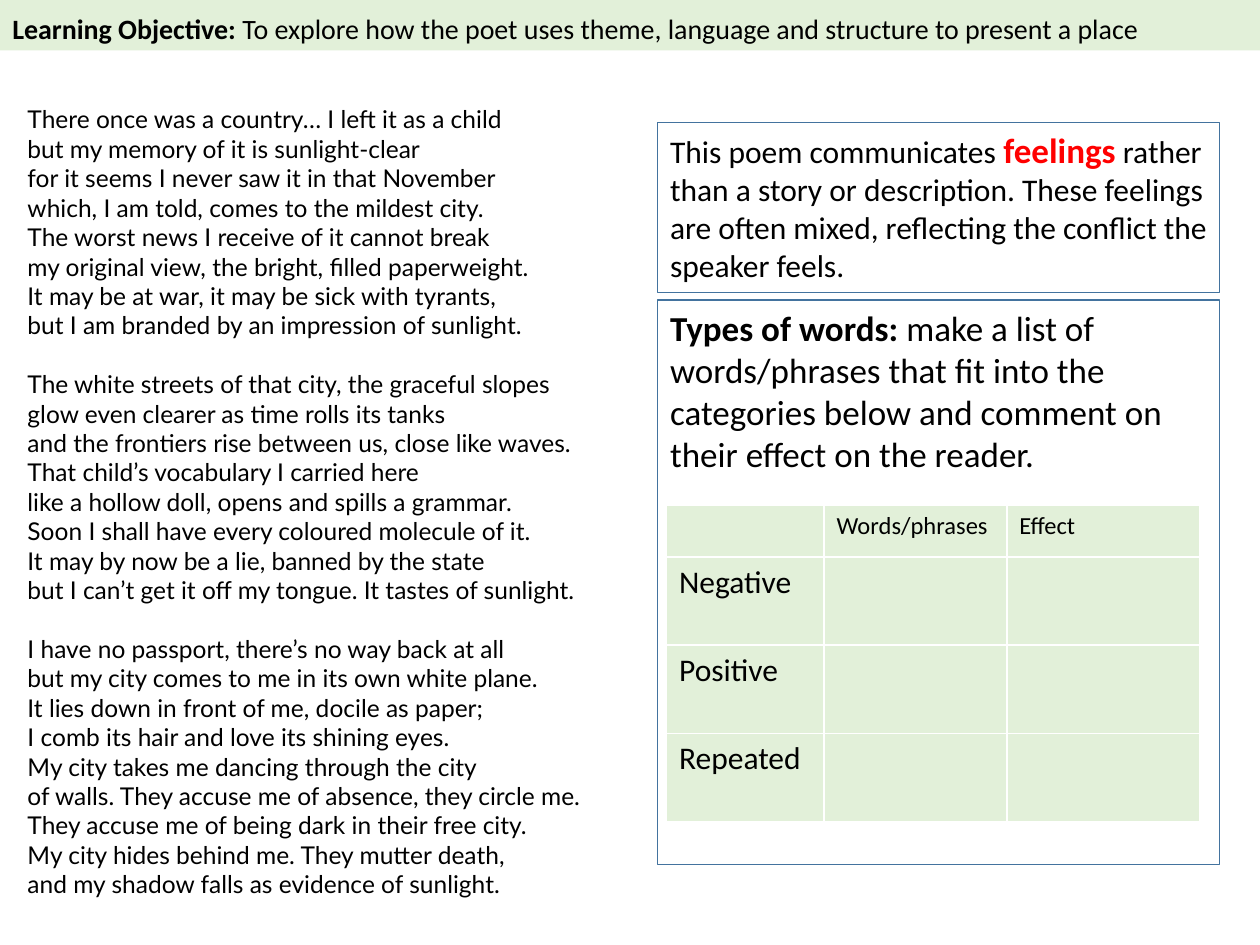
from pptx import Presentation
from pptx.dml.color import RGBColor
from pptx.enum.shapes import MSO_SHAPE
from pptx.enum.text import MSO_ANCHOR, PP_ALIGN
from pptx.util import Inches, Pt

BLACK = RGBColor(0x00, 0x00, 0x00)
RED = RGBColor(0xFF, 0x00, 0x00)
PALE_GREEN = RGBColor(0xE2, 0xF0, 0xD9)
BLUE = RGBColor(0x43, 0x73, 0x9E)

STANZAS = [
    """There once was a country… I left it as a child
but my memory of it is sunlight-clear
for it seems I never saw it in that November
which, I am told, comes to the mildest city.
The worst news I receive of it cannot break
my original view, the bright, filled paperweight.
It may be at war, it may be sick with tyrants,
but I am branded by an impression of sunlight.""",
    """The white streets of that city, the graceful slopes
glow even clearer as time rolls its tanks
and the frontiers rise between us, close like waves.
That child’s vocabulary I carried here
like a hollow doll, opens and spills a grammar.
Soon I shall have every coloured molecule of it.
It may by now be a lie, banned by the state
but I can’t get it off my tongue. It tastes of sunlight.""",
    """I have no passport, there’s no way back at all
but my city comes to me in its own white plane.
It lies down in front of me, docile as paper;
I comb its hair and love its shining eyes.
My city takes me dancing through the city
of walls. They accuse me of absence, they circle me.
They accuse me of being dark in their free city.
My city hides behind me. They mutter death,
and my shadow falls as evidence of sunlight.""",
]


def add_box(left, top, width, height, runs, fill=None, line=None):
    """Add a rectangle whose runs are (text, size, bold, colour)."""
    shape = slide.shapes.add_shape(
        MSO_SHAPE.RECTANGLE, Inches(left), Inches(top), Inches(width), Inches(height))
    shape.shadow.inherit = False
    if fill:
        shape.fill.solid()
        shape.fill.fore_color.rgb = fill
    else:
        shape.fill.background()
    if line:
        shape.line.color.rgb = line
        shape.line.width = Pt(0.75)
    else:
        shape.line.fill.background()
    frame = shape.text_frame
    frame.word_wrap = True
    frame.vertical_anchor = MSO_ANCHOR.TOP
    paragraph = frame.paragraphs[0]
    paragraph.alignment = PP_ALIGN.LEFT
    paragraph.font.name = "Calibri"
    for text, size, bold, color in runs:
        run = paragraph.add_run()
        run.text = text
        run.font.name = "Calibri"
        run.font.size = Pt(size)
        run.font.bold = bold
        run.font.color.rgb = color
    return shape


presentation = Presentation()
presentation.slide_width = Inches(10)
presentation.slide_height = Inches(7.5)
slide = presentation.slides.add_slide(presentation.slide_layouts[6])

# Learning objective banner
banner = add_box(0, 0, 10, 0.4, [
    ("Learning Objective: ", 16, True, BLACK),
    ("To explore how the poet uses theme, language and structure to present a place",
     16, False, BLACK),
], fill=PALE_GREEN)
banner.text_frame.margin_top = Inches(0.09)
banner.text_frame.margin_bottom = 0

# Poem, one paragraph per stanza
poem = slide.shapes.add_textbox(Inches(0.12), Inches(0.78), Inches(9.27), Inches(6.46))
poem.text_frame.word_wrap = True
for index, stanza in enumerate(STANZAS):
    paragraph = poem.text_frame.paragraphs[0] if index == 0 else poem.text_frame.add_paragraph()
    paragraph.text = stanza
    paragraph.font.name = "Lato"
    paragraph.font.size = Pt(14)
    paragraph.font.color.rgb = BLACK
    if index:
        paragraph.space_before = Pt(16.8)

# Task box
add_box(5.22, 2.38, 4.46, 4.48, [
    ("Types of words: ", 20, True, BLACK),
    ("make a list of words/phrases that fit into the categories below and comment "
     "on their effect on the reader.", 20, False, BLACK),
], line=BLUE)

# Table of word types
rows = [["", "Words/phrases", "Effect"], ["Negative", "", ""],
        ["Positive", "", ""], ["Repeated", "", ""]]
table = slide.shapes.add_table(
    4, 3, Inches(5.29), Inches(4.01), Inches(4.23), Inches(2.51)).table
table.horz_banding = False
for column, width in zip(table.columns, (1.25, 1.45, 1.53)):
    column.width = Inches(width)
for row_index, texts in enumerate(rows):
    table.rows[row_index].height = Inches(0.7 if row_index else 0.41)
    for column_index, text in enumerate(texts):
        cell = table.cell(row_index, column_index)
        cell.fill.solid()
        cell.fill.fore_color.rgb = PALE_GREEN
        cell.text = text
        font = cell.text_frame.paragraphs[0].font
        font.name = "Calibri"
        font.size = Pt(18 if row_index else 14)
        font.bold = False
        font.color.rgb = BLACK

# Feelings box
add_box(5.22, 0.97, 4.46, 1.35, [
    ("This poem communicates ", 18, False, BLACK),
    ("feelings", 20, True, RED),
    (" rather than a story or description. These feelings are often mixed, "
     "reflecting the conflict the speaker feels.", 18, False, BLACK),
], line=BLUE)

presentation.save("out.pptx")
